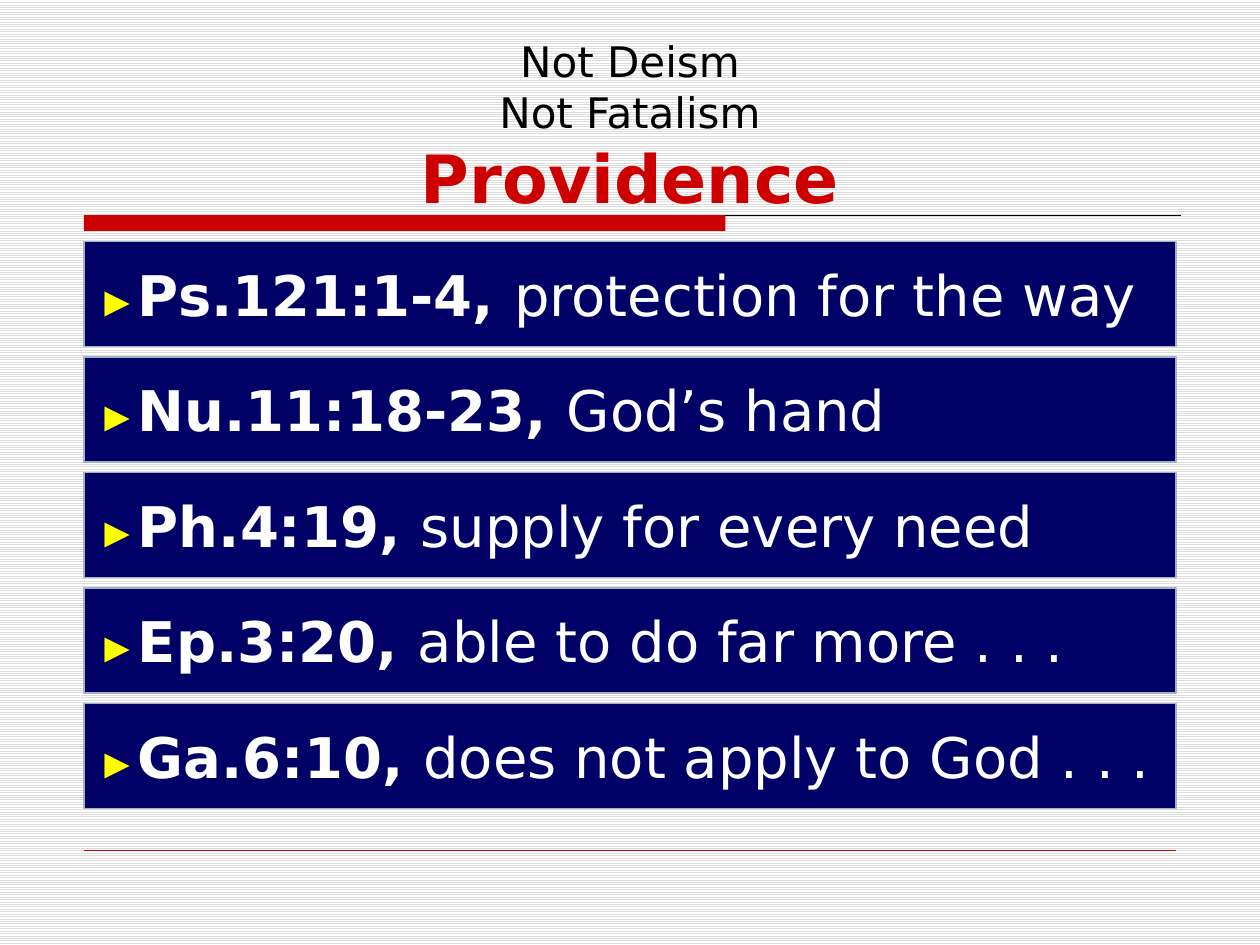
"""Build the Providence slide with five Scripture reference bars."""
from dataclasses import dataclass

import lxml.etree
import pptx
import pptx.dml.color
import pptx.enum.dml
import pptx.enum.shapes
import pptx.enum.text
import pptx.oxml.ns
import pptx.util

Pt = pptx.util.Pt
COLORS = {
    "red": "CC0000", "navy": "000066", "border": "A3B2C1", "yellow": "FFFF00",
    "white": "FFFFFF", "black": "000000", "stripe": "DDDDDD",
}
LEFT, WIDTH = 48, 624
BAR_TOP, BAR_HEIGHT, BAR_STEP = 138, 60, 66


@dataclass
class Verse:
    reference: str
    meaning: str


@dataclass
class Style:
    size: float
    color: str
    bold: bool = False
    font: str = "DejaVu Sans"


VERSES = [
    Verse("Ps.121:1-4, ", "protection for the way"),
    Verse("Nu.11:18-23, ", "God’s hand"),
    Verse("Ph.4:19, ", "supply for every need"),
    Verse("Ep.3:20, ", "able to do far more . . ."),
    Verse("Ga.6:10, ", "does not apply to God . . ."),
]
CONTRAST = Style(24, "black")
TOPIC = Style(38, "red", True)
MARKER = Style(24, "yellow", True, "Arial")
REFERENCE = Style(32, "white", True)
MEANING = Style(32, "white")


def rgb(name: str) -> pptx.dml.color.RGBColor:
    """Return the named colour."""
    return pptx.dml.color.RGBColor.from_string(COLORS[name])


def add_run(p, text: str, style: Style) -> None:
    """Append a formatted run to a paragraph."""
    r = p.add_run()
    r.text = text
    r.font.name = style.font
    r.font.size = Pt(style.size)
    r.font.bold = style.bold
    r.font.color.rgb = rgb(style.color)


def add_break(p, style: Style) -> None:
    """Append a line break as tall as the given style."""
    p.add_line_break()
    br = p._p.findall(pptx.oxml.ns.qn("a:br"))[-1]
    lxml.etree.SubElement(br, pptx.oxml.ns.qn("a:rPr"), sz=str(style.size * 100))


def add_rect(s, top: float, width: float, height: float, fill: str, border: str = ""):
    """Add a flat rectangle at the left margin."""
    sp = s.shapes.add_shape(pptx.enum.shapes.MSO_SHAPE.RECTANGLE,
                            Pt(LEFT), Pt(top), Pt(width), Pt(height))
    sp.shadow.inherit = False
    sp.fill.solid()
    sp.fill.fore_color.rgb = rgb(fill)
    if border:
        sp.line.color.rgb = rgb(border)
        sp.line.width = Pt(0.75)
    else:
        sp.line.fill.background()
    return sp


def add_rule(s, y: float, right: float, color: str, weight: float) -> None:
    """Add a horizontal line from the left margin."""
    line = s.shapes.add_connector(pptx.enum.shapes.MSO_CONNECTOR.STRAIGHT,
                                  Pt(LEFT), Pt(y), Pt(right), Pt(y))
    line.line.color.rgb = rgb(color)
    line.line.width = Pt(weight)
    lxml.etree.SubElement(line._element.spPr, pptx.oxml.ns.qn("a:effectLst"))


def add_title(s) -> None:
    """Fill the title placeholder."""
    sp = s.shapes.title
    sp.left, sp.top, sp.width, sp.height = Pt(45), Pt(24), Pt(630), Pt(96)
    tf = sp.text_frame
    tf.auto_size = pptx.enum.text.MSO_AUTO_SIZE.NONE
    tf.vertical_anchor = pptx.enum.text.MSO_ANCHOR.MIDDLE
    p = tf.paragraphs[0]
    p.alignment = pptx.enum.text.PP_ALIGN.CENTER
    for text in ("Not Deism", "Not Fatalism"):
        add_run(p, text, CONTRAST)
        add_break(p, CONTRAST)
    add_run(p, "Providence", TOPIC)


def add_verse(s, verse: Verse, top: float) -> None:
    """Add one bar with a marker, a reference and its meaning."""
    tf = add_rect(s, top, WIDTH, BAR_HEIGHT, "navy", "border").text_frame
    tf.word_wrap = True
    tf.vertical_anchor = pptx.enum.text.MSO_ANCHOR.MIDDLE
    p = tf.paragraphs[0]
    p.alignment = pptx.enum.text.PP_ALIGN.LEFT
    add_run(p, "►", MARKER)
    add_run(p, verse.reference, REFERENCE)
    add_run(p, verse.meaning, MEANING)


def main() -> None:
    """Create and save the presentation."""
    prs = pptx.Presentation()
    prs.slide_width, prs.slide_height = Pt(720), Pt(540)
    s = prs.slides.add_slide(prs.slide_layouts[5])
    fill = s.background.fill
    fill.patterned()
    fill.pattern = pptx.enum.dml.MSO_PATTERN.LIGHT_HORIZONTAL
    fill.fore_color.rgb = rgb("stripe")
    fill.back_color.rgb = rgb("white")
    add_rule(s, 123, 675, "black", 0.75)
    add_rect(s, 123, 366.5, 9, "red")
    add_rule(s, 486, LEFT + WIDTH, "red", 0.25)
    add_title(s)
    for i, verse in enumerate(VERSES):
        add_verse(s, verse, BAR_TOP + i * BAR_STEP)
    prs.save("out.pptx")


if __name__ == "__main__":
    main()
